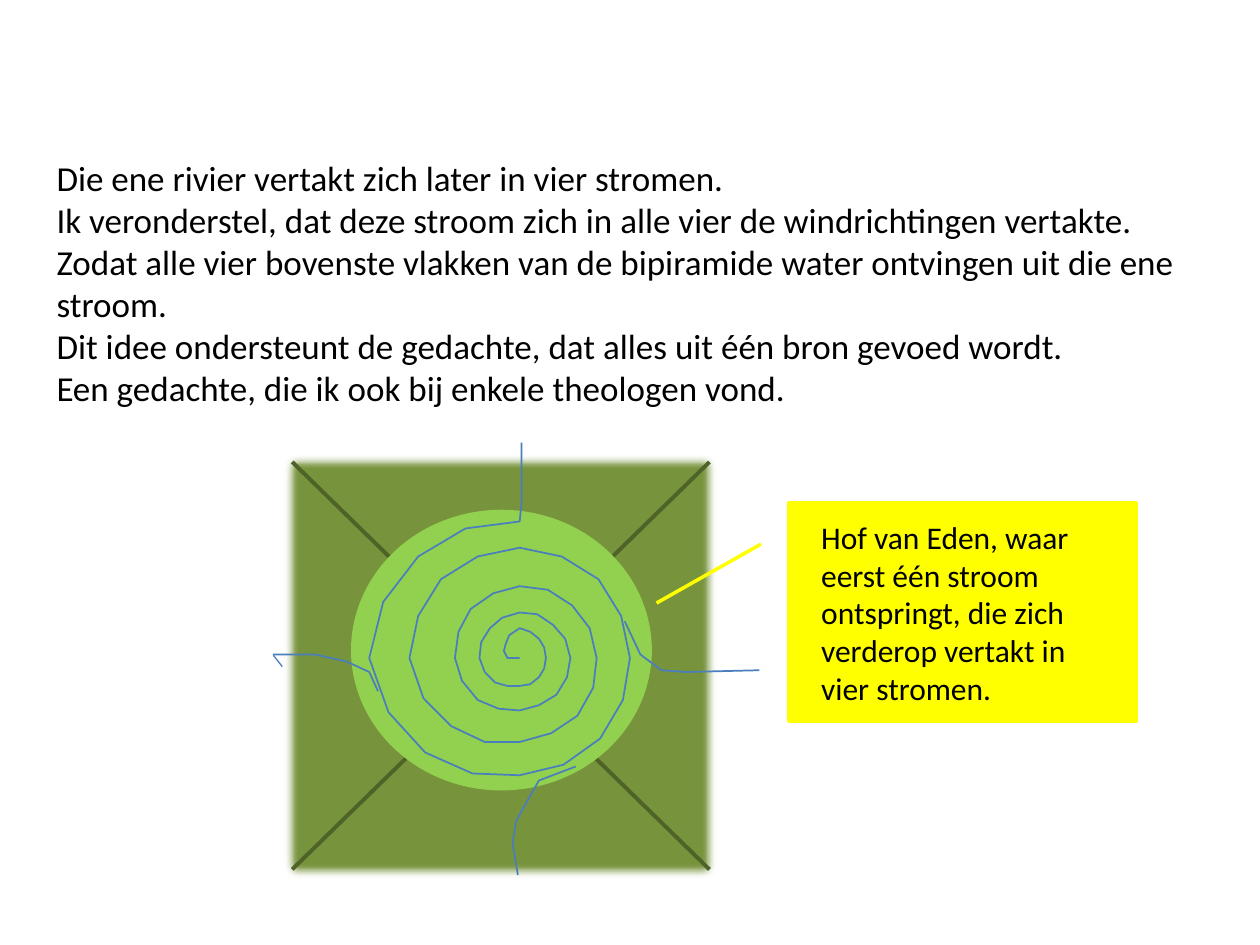
import math
from dataclasses import dataclass

from lxml import etree
from pptx import Presentation
from pptx import util as u
from pptx.dml.color import RGBColor
from pptx.enum import shapes, text
from pptx.oxml import ns

Pt = u.Pt


@dataclass(frozen=True)
class Theme:
    font: str = "Calibri"
    body: float = 20
    label: float = 18
    ink: str = "000000"
    land: str = "77933C"
    ridge: str = "4F6228"
    garden: str = "92D050"
    water: str = "4B7EBC"
    note: str = "FFFF00"


THEME = Theme()

INTRO = [
    [
        "Die ene rivier vertakt zich later in vier stromen.",
        "Ik veronderstel, dat deze stroom zich in alle vier de windrichtingen vertakte.",
        "Zodat alle vier bovenste vlakken van de bipiramide water ontvingen uit die ene stroom.",
        "Dit idee ondersteunt de gedachte, dat alles uit één bron gevoed wordt.",
    ],
    ["Een gedachte, die ik ook bij enkele theologen vond."],
]
NOTE = [["Hof van Eden, waar eerst één stroom ontspringt, die zich verderop vertakt in vier stromen."]]

SPRING = (297, 376)
QUARTER_RADII = (7, 17, 15, 16, 23, 26, 29, 30, 37, 41, 44, 48, 63, 63, 63, 67, 86, 78)
NORTH = [(298, 288), (298, 253)]
SOUTH = [(329, 438), (308, 446), (295, 469), (293, 482), (296, 500)]
WEST = [(216, 395), (211, 384), (198, 378), (180, 374), (156, 374)]
EAST = [(357, 355), (366, 374), (378, 383), (392, 384), (434, 383)]


def rgb(value):
    return RGBColor.from_string(value)


def effects(element):
    return etree.SubElement(element.spPr, ns.qn("a:effectLst"))


def spiral(center, radii, steps=4):
    points = [center]
    for i in range((len(radii) - 1) * steps + 1):
        quarter, part = divmod(i, steps)
        after = radii[min(quarter + 1, len(radii) - 1)]
        radius = radii[quarter] + (after - radii[quarter]) * part / steps
        angle = math.pi + i / steps * math.pi / 2
        points.append((center[0] + radius * math.cos(angle), center[1] + radius * math.sin(angle)))
    return points


def add_block(s, kind, box, color):
    sp = s.shapes.add_shape(kind, *map(Pt, box))
    sp.shadow.inherit = False
    sp.fill.solid()
    sp.fill.fore_color.rgb = rgb(color)
    sp.line.color.rgb = rgb(color)
    sp.line.width = Pt(2)
    return sp


def soften(sp, radius):
    edge = etree.SubElement(sp.element.spPr.find(ns.qn("a:effectLst")), ns.qn("a:softEdge"))
    edge.set("rad", str(Pt(radius)))


def add_line(s, start, end, color, width):
    line = s.shapes.add_connector(shapes.MSO_CONNECTOR.STRAIGHT, *map(Pt, start + end))
    line.line.color.rgb = rgb(color)
    line.line.width = Pt(width)
    effects(line.element)


def add_stream(s, points):
    builder = s.shapes.build_freeform(*points[0], scale=Pt(1))
    builder.add_line_segments(points[1:], close=False)
    sp = builder.convert_to_shape()
    sp.shadow.inherit = False
    sp.fill.background()
    sp.line.color.rgb = rgb(THEME.water)
    sp.line.width = Pt(1)


def add_text(s, box, paragraphs, size, top=3.6):
    tf = s.shapes.add_textbox(*map(Pt, box)).text_frame
    tf.word_wrap = True
    tf.margin_top = Pt(top)
    for i, lines in enumerate(paragraphs):
        p = tf.add_paragraph() if i else tf.paragraphs[0]
        p.alignment = text.PP_ALIGN.LEFT
        for j, line in enumerate(lines):
            if j:
                p.add_line_break()
            r = p.add_run()
            r.text = line
            r.font.name = THEME.font
            r.font.size = Pt(size)
            r.font.color.rgb = rgb(THEME.ink)


def main():
    prs = Presentation()
    prs.slide_width, prs.slide_height = Pt(720), Pt(540)
    s = prs.slides.add_slide(prs.slide_layouts[6])
    kinds = shapes.MSO_SHAPE

    land = add_block(s, kinds.RECTANGLE, (161.3, 258.5, 249.1, 244.1), THEME.land)
    soften(land, 5)
    left, top, right, bottom = 167, 264, 405.4, 496.8
    add_line(s, (left, top), (right, bottom), THEME.ridge, 2.25)
    add_line(s, (left, bottom), (right, top), THEME.ridge, 2.25)

    add_text(s, (25.2, 31.7, 668.9, 205.9), INTRO, THEME.body, top=57.6)

    add_block(s, kinds.OVAL, (201.6, 292.3, 169.9, 158.4), THEME.garden)
    for stream in (spiral(SPRING, QUARTER_RADII) + NORTH, SOUTH, WEST, EAST):
        add_stream(s, stream)

    note = add_block(s, kinds.LINE_CALLOUT_1, (450.7, 287.3, 198.7, 124.6), THEME.note)
    for i, value in enumerate((0.19, -0.08, 0.46, -0.38)):
        note.adjustments[i] = value
    add_text(s, (462.2, 292.3, 175.7, 116.6), NOTE, THEME.label)
    add_line(s, (156.2, 374.4), (161.3, 380.9), THEME.water, 0.75)

    prs.save("out.pptx")


if __name__ == "__main__":
    main()
